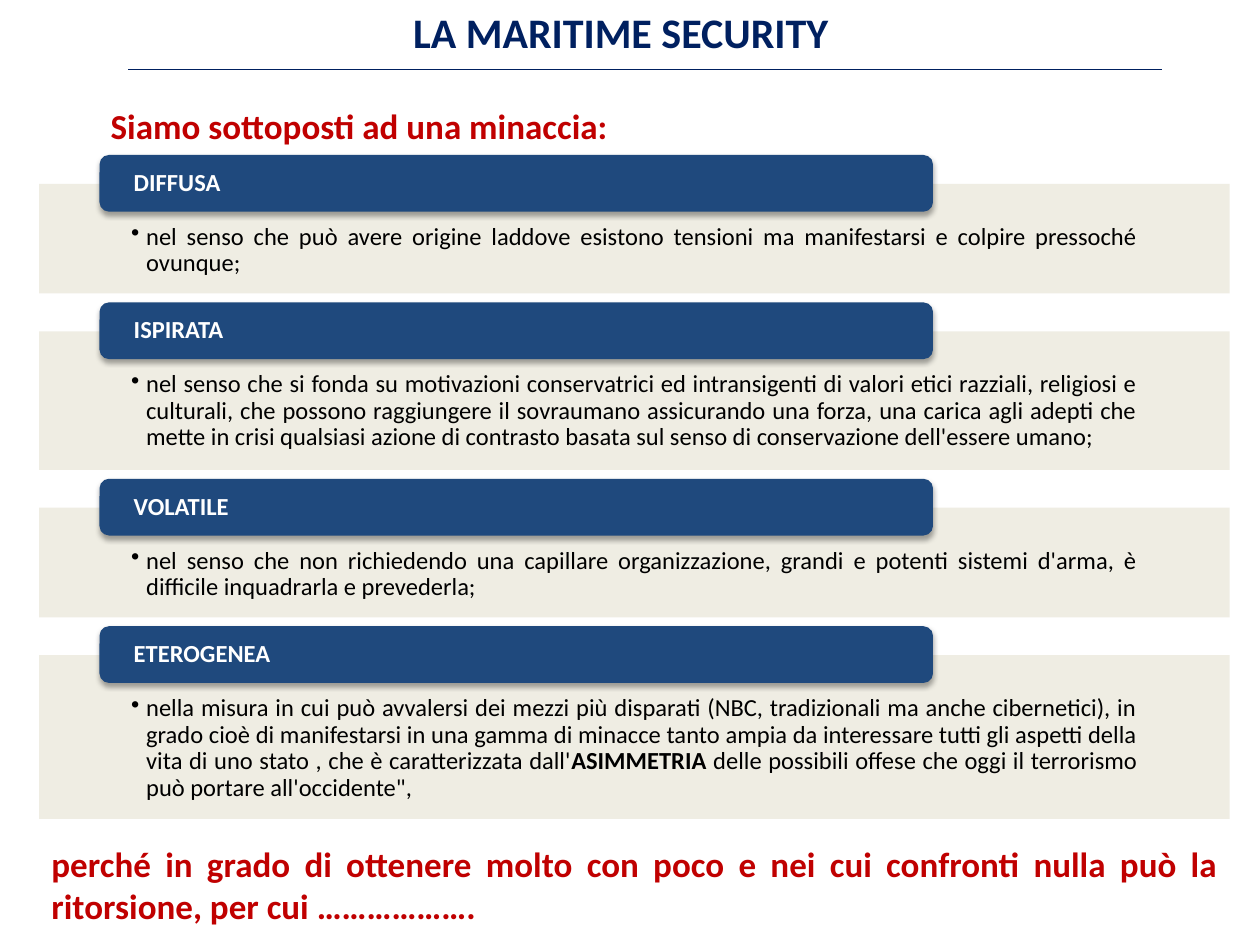
from dataclasses import dataclass

from lxml.etree import SubElement
from pptx import Presentation
from pptx.dml.color import RGBColor as RGB
from pptx.enum.shapes import MSO_CONNECTOR as Conn, MSO_SHAPE as Kind
from pptx.enum.text import MSO_ANCHOR as Anchor, MSO_AUTO_SIZE as Auto, PP_ALIGN as Align
from pptx.oxml.ns import qn
from pptx.util import Inches, Pt


@dataclass(frozen=True)
class Theme:
    """Colours, type sizes and font of the slide."""
    face: str = "Calibri"
    navy: RGB = RGB(0x00, 0x20, 0x60)
    blue: RGB = RGB(0x1F, 0x49, 0x7D)
    red: RGB = RGB(0xC0, 0x00, 0x00)
    sand: RGB = RGB(0xEE, 0xEC, 0xE1)
    black: RGB = RGB(0, 0, 0)
    white: RGB = RGB(0xFF, 0xFF, 0xFF)
    head: int = 24
    lead: int = 20
    body: int = 14


THEME = Theme()
LEFT, WIDE = 0.31, 9.45
TOP, GAP = 1.46, 0.3
THREATS = [
    ("DIFFUSA", 0.87, [
        ("nel senso che può avere origine laddove esistono tensioni ma manifestarsi "
         "e colpire pressoché ovunque; ", False)]),
    ("ISPIRATA", 1.1, [
        ("nel senso che si fonda su motivazioni conservatrici ed intransigenti di valori "
         "etici razziali, religiosi e culturali, che possono raggiungere il sovraumano "
         "assicurando una forza, una carica agli adepti che mette in crisi qualsiasi azione "
         "di contrasto basata sul senso di conservazione dell'essere umano; ", False)]),
    ("VOLATILE", 0.87, [
        ("nel senso che non richiedendo una capillare organizzazione, grandi e potenti "
         "sistemi d'arma, è difficile inquadrarla e prevederla; ", False)]),
    ("ETEROGENEA", 1.3, [
        ("nella misura in cui può avvalersi dei mezzi più disparati (NBC, tradizionali ma "
         "anche cibernetici), in grado cioè di manifestarsi in una gamma di minacce tanto "
         "ampia da interessare tutti gli aspetti della vita di uno stato , che è "
         "caratterizzata dall'", False),
        ("ASIMMETRIA", True),
        (" delle possibili offese che oggi il terrorismo può portare all'occidente\", ", False)]),
]


def style(para, size, color, bold, align):
    """Set the font and alignment of a paragraph."""
    para.alignment = align
    font = para.font
    font.name, font.size, font.bold = THEME.face, Pt(size), bold
    font.color.rgb = color


def inset(frame, left, top, right, bottom):
    """Set the margins of a text frame and wrap its text."""
    frame.word_wrap = True
    frame.margin_left, frame.margin_top = Inches(left), Inches(top)
    frame.margin_right, frame.margin_bottom = Inches(right), Inches(bottom)


def block(slide, kind, box, color):
    """Add a plain filled shape without line or shadow."""
    shape = slide.shapes.add_shape(kind, *map(Inches, box))
    shape.shadow.inherit = False
    shape.fill.solid()
    shape.fill.fore_color.rgb = color
    shape.line.fill.background()
    return shape


def title(slide, box):
    """Place the title in its box, with a rule below."""
    x, y, w, h = box
    head = slide.shapes.title
    head.left, head.top, head.width, head.height = map(Inches, box)
    frame = head.text_frame
    inset(frame, 0.1, 0.05, 0.1, 0.05)
    frame.auto_size = Auto.NONE
    frame.vertical_anchor = Anchor.TOP
    frame.text = "LA MARITIME SECURITY "
    style(frame.paragraphs[0], THEME.head, THEME.navy, True, Align.CENTER)
    low = Inches(y + h + 0.05)
    rule = slide.shapes.add_connector(Conn.STRAIGHT, Inches(x), low, Inches(9.22), low)
    rule.line.color.rgb = THEME.navy
    rule.line.width = Pt(0.75)
    SubElement(rule._element.spPr, qn("a:effectLst"))


def lead(slide, box, text, align):
    """Add a bold red statement."""
    frame = slide.shapes.add_textbox(*map(Inches, box)).text_frame
    frame.word_wrap = True
    frame.text = text
    style(frame.paragraphs[0], THEME.lead, THEME.red, True, align)


def panel(slide, box, runs):
    """Add a translucent panel with one bulleted text."""
    shape = block(slide, Kind.RECTANGLE, box, THEME.sand)
    tint = shape._element.spPr.find(".//" + qn("a:srgbClr"))
    SubElement(tint, qn("a:alpha"), val="90000")
    frame = shape.text_frame
    inset(frame, 0.73, 0.32, 0.73, 0.11)
    frame.vertical_anchor = Anchor.TOP
    para = frame.paragraphs[0]
    props = para._p.get_or_add_pPr()
    props.set("marL", str(Inches(0.12)))
    props.set("indent", str(-Inches(0.12)))
    SubElement(props, qn("a:buChar"), char="•")
    para.line_spacing = 0.9
    style(para, THEME.body, THEME.black, False, Align.JUSTIFY)
    for text, bold in runs:
        run = para.add_run()
        run.text = text
        if bold:
            run.font.bold = True


def label(slide, box, text):
    """Add a rounded blue label with a soft shadow."""
    shape = block(slide, Kind.ROUNDED_RECTANGLE, box, THEME.blue)
    glow = SubElement(shape._element.spPr.find(qn("a:effectLst")), qn("a:outerShdw"),
                      blurRad=str(Pt(3.1)), dist=str(Pt(1.8)), dir="5400000", rotWithShape="0")
    shade = SubElement(glow, qn("a:srgbClr"), val=str(THEME.black))
    SubElement(shade, qn("a:alpha"), val="35000")
    frame = shape.text_frame
    inset(frame, 0.25, 0, 0.25, 0)
    frame.vertical_anchor = Anchor.MIDDLE
    frame.text = text
    para = frame.paragraphs[0]
    para.line_spacing = 0.9
    style(para, THEME.body, THEME.white, True, Align.JUSTIFY)


def threat(slide, box, name, runs):
    """Add a panel with its label across the top edge."""
    x, y, w, h = box
    panel(slide, box, runs)
    label(slide, (x + 0.48, y - 0.23, w * 0.7, 0.45), name)


def main():
    """Build the slide and save it."""
    deck = Presentation()
    deck.slide_width, deck.slide_height = Inches(10), Inches(7.5)
    slide = deck.slides.add_slide(deck.slide_layouts[5])
    title(slide, (1.02, 0, 7.89, 0.5))
    lead(slide, (0.78, 0.78, 5.58, 0.44), "Siamo sottoposti ad una minaccia:", Align.LEFT)
    y = TOP
    for name, tall, runs in THREATS:
        threat(slide, (LEFT, y, WIDE, tall), name, runs)
        y += tall + GAP
    lead(slide, (LEFT, 6.64, WIDE, 0.77),
         "perché in grado di ottenere molto con poco e nei cui confronti nulla può la "
         "ritorsione, per cui ……………….", Align.JUSTIFY)
    deck.save("out.pptx")


if __name__ == "__main__":
    main()
